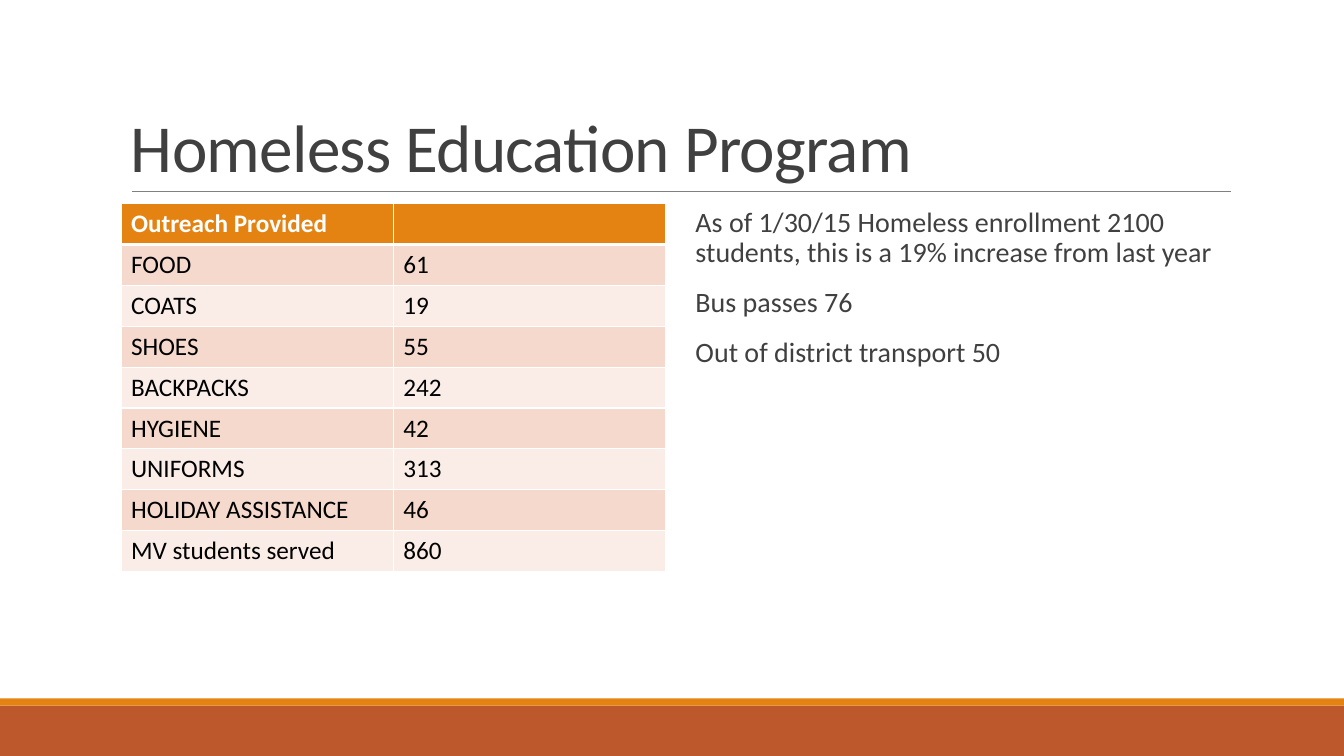
from lxml import etree
from pptx import Presentation
from pptx import util as u
from pptx.dml.color import RGBColor
from pptx.enum import shapes, text
from pptx.oxml.ns import qn

WIDTH, HEIGHT = 13.33, 7.5
LEFT, CONTENT_TOP, COLUMN_WIDTH, GAP = 1.2, 2.02, 5.4, 0.2
OUTREACH = [
    ("Outreach Provided", ""),
    ("FOOD", "61"),
    ("COATS", "19"),
    ("SHOES", "55"),
    ("BACKPACKS", "242"),
    ("HYGIENE", "42"),
    ("UNIFORMS", "313"),
    ("HOLIDAY ASSISTANCE", "46"),
    ("MV students served", "860"),
]
FACTS = [
    "As of 1/30/15 Homeless enrollment 2100 students, this is a 19% increase from last year",
    "Bus passes 76",
    "Out of district transport 50",
]


def color(value):
    return RGBColor.from_string(value)


def inches(box):
    return [u.Inches(length) for length in box]


def format_runs(para, size, ink, bold=False):
    for span in para.runs:
        span.font.name = "Calibri"
        span.font.size = u.Pt(size)
        span.font.bold = bold
        span.font.color.rgb = color(ink)


def add_band(page, box, fill):
    band = page.shapes.add_shape(shapes.MSO_SHAPE.RECTANGLE, *inches(box))
    band.shadow.inherit = False
    band.fill.solid()
    band.fill.fore_color.rgb = color(fill)
    band.line.fill.background()


def add_footer(page, box):
    left, top, width, height = box
    stripe = 0.07
    add_band(page, (left, top + stripe, width, height - stripe), "BD582C")
    add_band(page, (left, top, width, stripe), "E48312")


def add_title(page, box):
    left, top, width, height = box
    bottom = top + height
    start, end = left + 0.11, left + width + 0.01
    rule = page.shapes.add_connector(
        shapes.MSO_CONNECTOR.STRAIGHT, *inches((start, bottom, end, bottom)))
    rule.line.color.rgb = color("808080")
    rule.line.width = u.Pt(0.5)
    etree.SubElement(rule._element.spPr, qn("a:effectLst"))

    frame = page.shapes.add_textbox(*inches(box)).text_frame
    frame.word_wrap = True
    frame.vertical_anchor = text.MSO_ANCHOR.BOTTOM
    frame.text = "Homeless Education Program"
    para = frame.paragraphs[0]
    para.line_spacing = 0.85
    format_runs(para, 48, "404040")
    para.runs[0].font._element.set("spc", "-50")


def add_borders(cell, bottom_width):
    properties = cell._tc.get_or_add_tcPr()
    for side, width in (("L", 1), ("R", 1), ("T", 1), ("B", bottom_width)):
        line = etree.SubElement(properties, qn(f"a:ln{side}"), w=str(u.Pt(width)))
        fill = etree.SubElement(line, qn("a:solidFill"))
        etree.SubElement(fill, qn("a:srgbClr"), val="FFFFFF")


def add_outreach_table(page, box):
    table = page.shapes.add_table(len(OUTREACH), 2, *inches(box)).table
    for index, entries in enumerate(OUTREACH):
        header = index == 0
        fill = "E48312" if header else ("FAEDE7", "F5D9CC")[index % 2]
        for column, entry in enumerate(entries):
            cell = table.cell(index, column)
            add_borders(cell, 3 if header else 1)
            cell.fill.solid()
            cell.fill.fore_color.rgb = color(fill)
            cell.text = entry
            format_runs(cell.text_frame.paragraphs[0], 18,
                        "FFFFFF" if header else "000000", header)


def add_facts(page, box):
    frame = page.shapes.add_textbox(*inches(box)).text_frame
    frame.word_wrap = True
    frame.margin_left, frame.margin_right = u.Inches(0.1), 0
    frame.text = "\n".join(FACTS)
    for para in frame.paragraphs:
        para.line_spacing = 0.9
        para.space_before = u.Pt(12)
        para.space_after = u.Pt(2)
        format_runs(para, 20, "404040")


def main():
    deck = Presentation()
    deck.slide_width, deck.slide_height = inches((WIDTH, HEIGHT))
    page = deck.slides.add_slide(deck.slide_layouts[6])
    add_footer(page, (0, 6.93, WIDTH, HEIGHT - 6.93))
    add_title(page, (LEFT, 0.31, 2 * COLUMN_WIDTH + GAP, 1.59))
    add_outreach_table(page, (LEFT, CONTENT_TOP, COLUMN_WIDTH, 3.65))
    add_facts(page, (LEFT + COLUMN_WIDTH + GAP, CONTENT_TOP, COLUMN_WIDTH, 4.4))
    deck.save("out.pptx")


if __name__ == "__main__":
    main()
